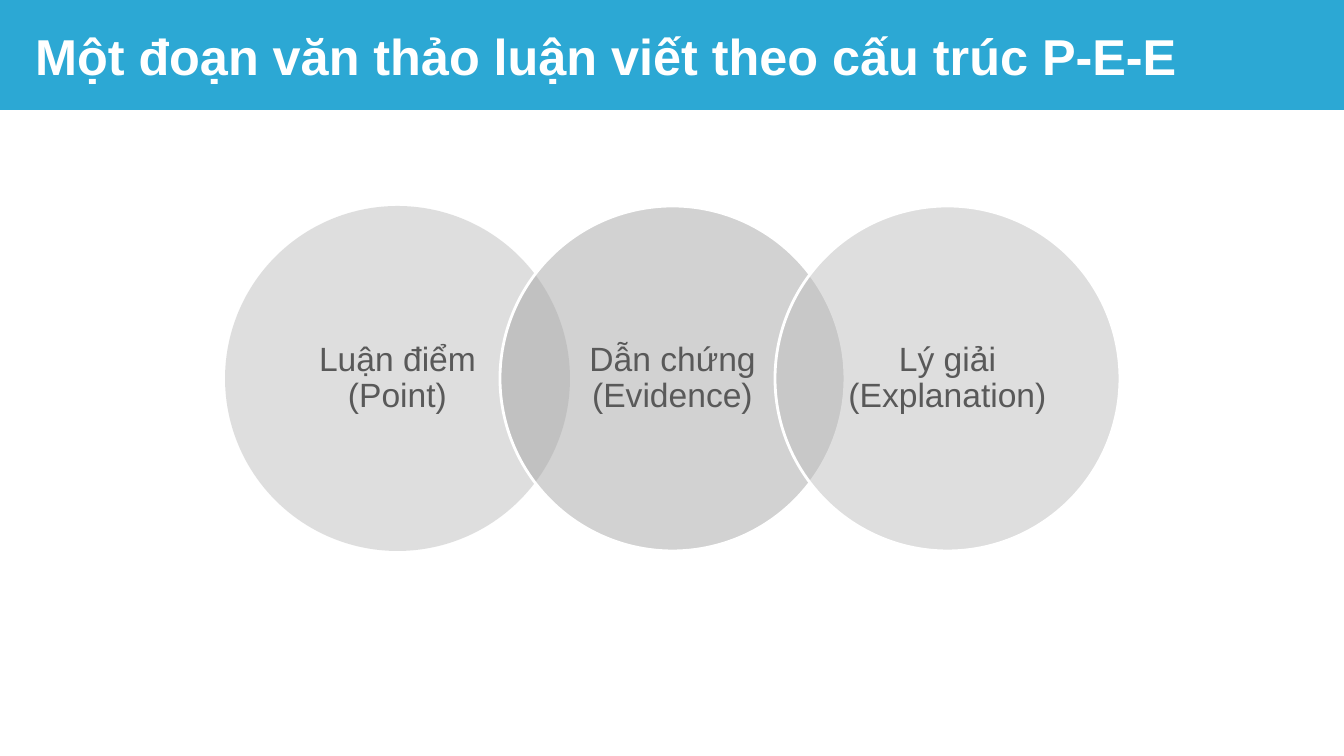
"""Build the P-E-E paragraph structure slide with three overlapping circles."""
from dataclasses import dataclass

from lxml.etree import SubElement
from pptx import Presentation
from pptx.dml.color import RGBColor
from pptx.enum.shapes import MSO_SHAPE as Shape
from pptx.enum.text import MSO_ANCHOR as Anchor, MSO_AUTO_SIZE as AutoSize, PP_ALIGN as Align
from pptx.oxml.ns import qn
from pptx.util import Pt

TITLE = "Một đoạn văn thảo luận viết theo cấu trúc P-E-E"
PARTS = [
    ("Luận điểm (Point)", "BFBFBF", False),
    ("Dẫn chứng (Evidence)", "A6A6A6", True),
    ("Lý giải (Explanation)", "BFBFBF", True),
]
PAGE_WIDTH, PAGE_HEIGHT = 1344, 756
BAND_HEIGHT = 110
TITLE_BOX = (25, 12, 1303, 86)
CIRCLE_LEFT, CIRCLE_TOP, DIAMETER, PITCH = 225, 206, 345, 275
INSET_X, INSET_Y = 19, 3


@dataclass(frozen=True)
class Theme:
    """Colours, font and sizes of the slide."""
    band: str = "2CA8D4"
    white: str = "FFFFFF"
    text: str = "595959"
    font: str = "Arial"
    title_size: int = 36
    label_size: int = 24
    outline: int = 2
    opacity: int = 50


THEME = Theme()


def px(length):
    """Turn pixels into EMU."""
    return round(length * 914400 / 100.8)


def color(value):
    """Turn a hex string into a colour."""
    return RGBColor.from_string(value)


def add_shape(page, kind, box, fill):
    """Add a flat filled shape without outline."""
    shape = page.shapes.add_shape(kind, *map(px, box))
    shape.shadow.inherit = False
    shape.fill.solid()
    shape.fill.fore_color.rgb = color(fill)
    shape.line.fill.background()
    return shape


def write(shape, text, size, tint, align, bold=False):
    """Set and format one paragraph, centred vertically."""
    frame = shape.text_frame
    frame.text = text
    frame.word_wrap = True
    frame.auto_size = AutoSize.NONE
    frame.vertical_anchor = Anchor.MIDDLE
    para = frame.paragraphs[0]
    para.alignment = align
    font = para.runs[0].font
    font.name, font.size, font.bold = THEME.font, Pt(size), bold
    font.color.rgb = color(tint)
    return frame


def add_title(page):
    """Place the title on its band."""
    band = add_shape(page, Shape.RECTANGLE, (0, 0, PAGE_WIDTH, BAND_HEIGHT), THEME.band)
    title = page.shapes.title
    title._element.addprevious(band._element)
    title.left, title.top, title.width, title.height = map(px, TITLE_BOX)
    write(title, TITLE, THEME.title_size, THEME.white, Align.LEFT, bold=True)


def add_circle(page, index, label, fill, outlined):
    """Add one half-transparent circle with its label."""
    box = (CIRCLE_LEFT + index * PITCH, CIRCLE_TOP, DIAMETER, DIAMETER)
    circle = add_shape(page, Shape.OVAL, box, fill)
    tint = circle._element.spPr.find(qn("a:solidFill"))[0]
    SubElement(tint, qn("a:alpha"), val=str(THEME.opacity * 1000))
    if outlined:
        circle.line.color.rgb = color(THEME.white)
        circle.line.width = Pt(THEME.outline)
    frame = write(circle, label, THEME.label_size, THEME.text, Align.CENTER)
    frame.margin_left = frame.margin_right = px(INSET_X)
    frame.margin_top = frame.margin_bottom = px(INSET_Y)
    frame.paragraphs[0].line_spacing = 0.9


def main():
    """Build and save the deck."""
    deck = Presentation()
    deck.slide_width, deck.slide_height = px(PAGE_WIDTH), px(PAGE_HEIGHT)
    page = deck.slides.add_slide(deck.slide_layouts.get_by_name("Title Only"))
    add_title(page)
    for index, part in enumerate(PARTS):
        add_circle(page, index, *part)
    deck.save("out.pptx")


if __name__ == "__main__":
    main()
